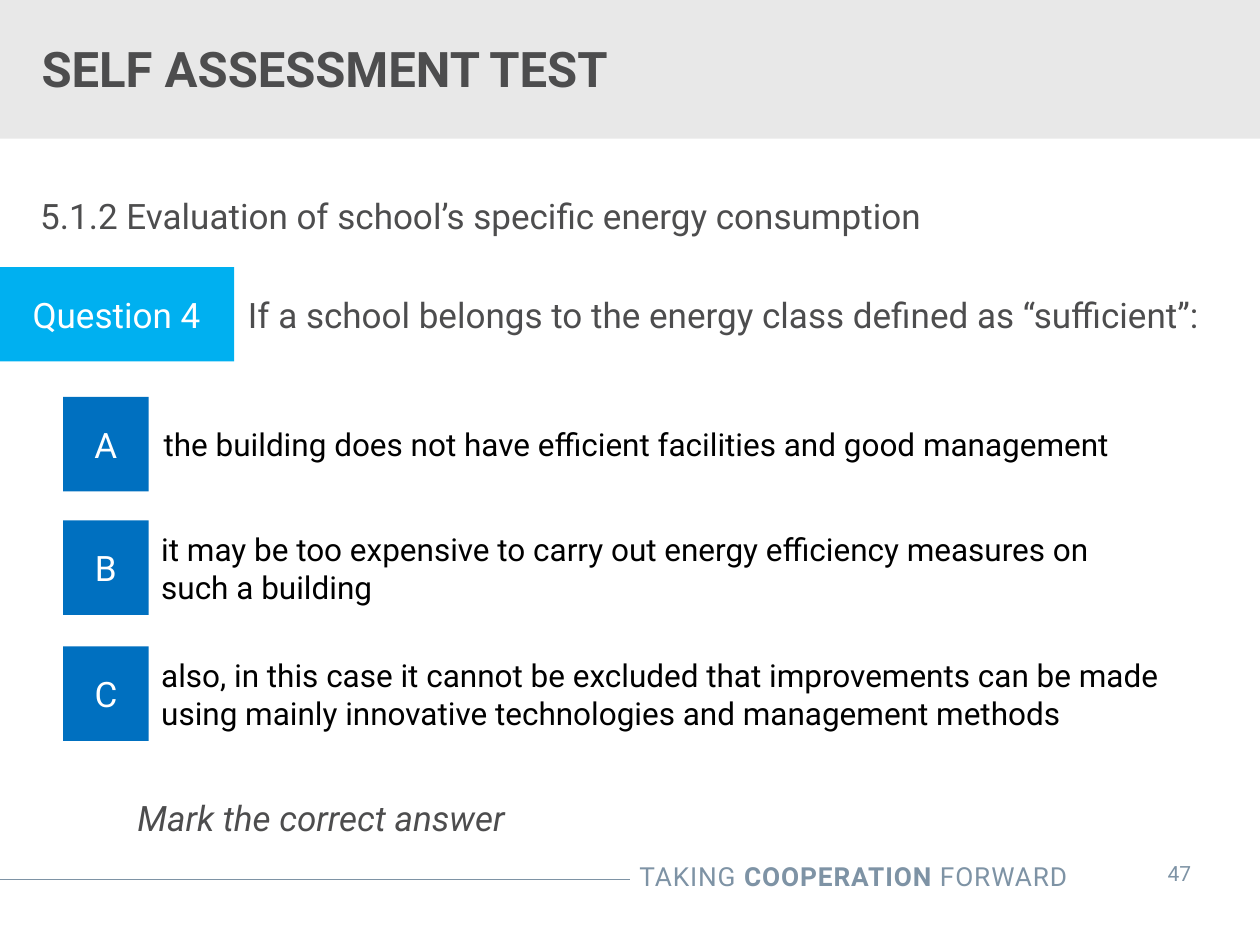
from dataclasses import dataclass

from lxml import etree
from pptx import Presentation
from pptx.dml.color import RGBColor
from pptx.enum import shapes, text
from pptx.oxml import ns
from pptx.util import Pt

LEFT, MID, RIGHT = text.PP_ALIGN.LEFT, text.PP_ALIGN.CENTER, text.PP_ALIGN.RIGHT


@dataclass(frozen=True)
class Theme:
    font: str = "Roboto"
    band: str = "E8E8E8"
    grey: str = "4D4D4E"
    steel: str = "7E93A5"
    sky: str = "00B0F0"
    blue: str = "0070C0"
    white: str = "FFFFFF"
    black: str = "000000"
    title: int = 28
    lead: int = 20
    body: int = 18
    foot: int = 15
    page: int = 12


class Deck:
    def __init__(self, theme, slide):
        self.theme = theme
        self.slide = slide

    def fill_text(self, shape, words, size, color, align=LEFT, bold=None, italic=None):
        para = shape.text_frame.paragraphs[0]
        para.alignment = align
        para.add_run().text = words
        font = para.font
        font.name = self.theme.font
        font.size = Pt(size)
        font.color.rgb = RGBColor.from_string(color)
        font.bold = bold
        font.italic = italic
        return para

    def block(self, box, fill, words=None):
        shape = self.slide.shapes.add_shape(
            shapes.MSO_SHAPE.RECTANGLE, *map(Pt, box))
        shape.shadow.inherit = False
        shape.fill.solid()
        shape.fill.fore_color.rgb = RGBColor.from_string(fill)
        shape.line.fill.background()
        if words:
            shape.text_frame.vertical_anchor = text.MSO_ANCHOR.MIDDLE
            self.fill_text(shape, words, self.theme.lead, self.theme.white, MID)

    def label(self, box, words, size, color, pad=(7.2, 3.6), top=False,
              wrap=True, **style):
        shape = self.slide.shapes.add_textbox(*map(Pt, box))
        frame = shape.text_frame
        frame.word_wrap = wrap
        frame.margin_left = frame.margin_right = Pt(pad[0])
        frame.margin_top = frame.margin_bottom = Pt(pad[1])
        anchor = text.MSO_ANCHOR
        frame.vertical_anchor = anchor.TOP if top else anchor.MIDDLE
        return self.fill_text(shape, words, size, color, **style)

    def rule(self, start, end, color, width):
        line = self.slide.shapes.add_connector(
            shapes.MSO_CONNECTOR.STRAIGHT, *map(Pt, start + end))
        line.line.color.rgb = RGBColor.from_string(color)
        line.line.width = Pt(width)
        etree.SubElement(line._element.spPr, ns.qn("a:effectLst"))

    def motto(self, box, parts):
        look = self.theme
        para = self.label(box, parts[0], look.foot, look.steel,
                          top=True, align=RIGHT)
        for part in parts[1:]:
            para.add_run().text = part
        para.runs[1].font.bold = True
        for run in para.runs:
            run._r.get_or_add_rPr().set("spc", "50")


def main():
    show = Presentation()
    show.slide_width, show.slide_height = Pt(720), Pt(540)
    look = Theme()
    deck = Deck(look, show.slides.add_slide(show.slide_layouts[6]))

    deck.rule((-0.7, 502.5), (360, 502.5), look.steel, 0.75)
    deck.block((0, 0, 720, 79.2), look.band)
    deck.motto((279.4, 488.2, 337.6, 25.2), ("TAKING ", "COOPERATION", " FORWARD"))
    deck.label((647.3, 484.6, 53.3, 28.8), "47", look.page, look.steel,
               pad=(14.4, 7.2), top=True, wrap=False, align=MID)

    deck.label((-0.7, 11.5, 519, 54), "SELF ASSESSMENT TEST", look.title,
               look.grey, pad=(24.5, 3.6), bold=True)
    deck.label((23, 110.9, 674, 24.5),
               "5.1.2 Evaluation of school’s specific energy consumption",
               look.lead, look.grey, pad=(0, 0), top=True)

    tall = 54
    deck.block((-0.7, 152.6, 134.6, tall), look.sky, "Question 4")
    deck.label((134.6, 152.6, 586.8, tall),
               "If a school belongs to the energy class defined as “sufficient”:",
               look.lead, look.grey)

    answers = (
        ("A", 226.8, 86.4,
         "the building does not have efficient facilities and good management"),
        ("B", 297.4, 85,
         "it may be too expensive to carry out energy efficiency measures on "
         "such a building"),
        ("C", 369.4, 85,
         "also, in this case it cannot be excluded that improvements can be made "
         "using mainly innovative technologies and management methods"),
    )
    for mark, top, left, words in answers:
        deck.block((36, top, 49, tall), look.blue, mark)
        deck.label((left, top, 586.8, tall), words, look.body, look.black)

    deck.label((78.5, 454.9, 618.5, 24.5), "Mark the correct answer",
               look.lead, look.grey, pad=(0, 0), top=True, italic=True)

    show.save("out.pptx")


if __name__ == "__main__":
    main()
